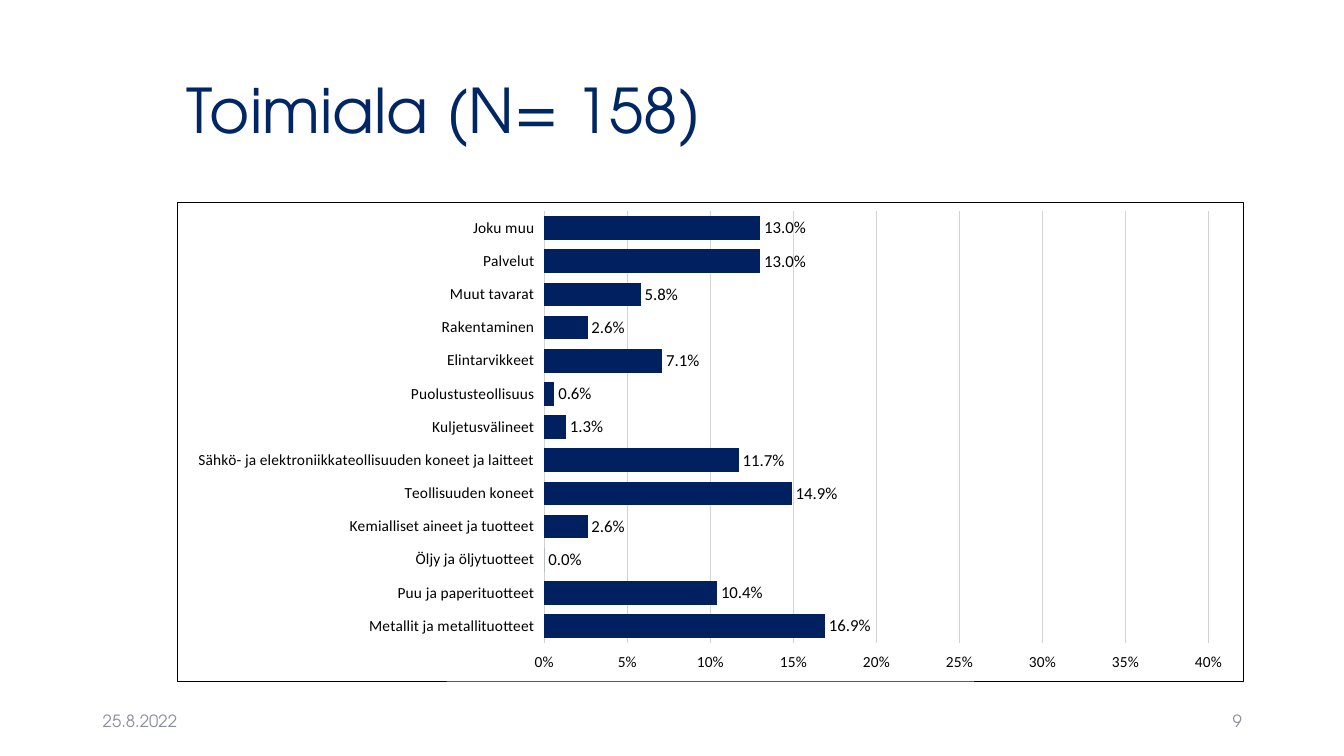
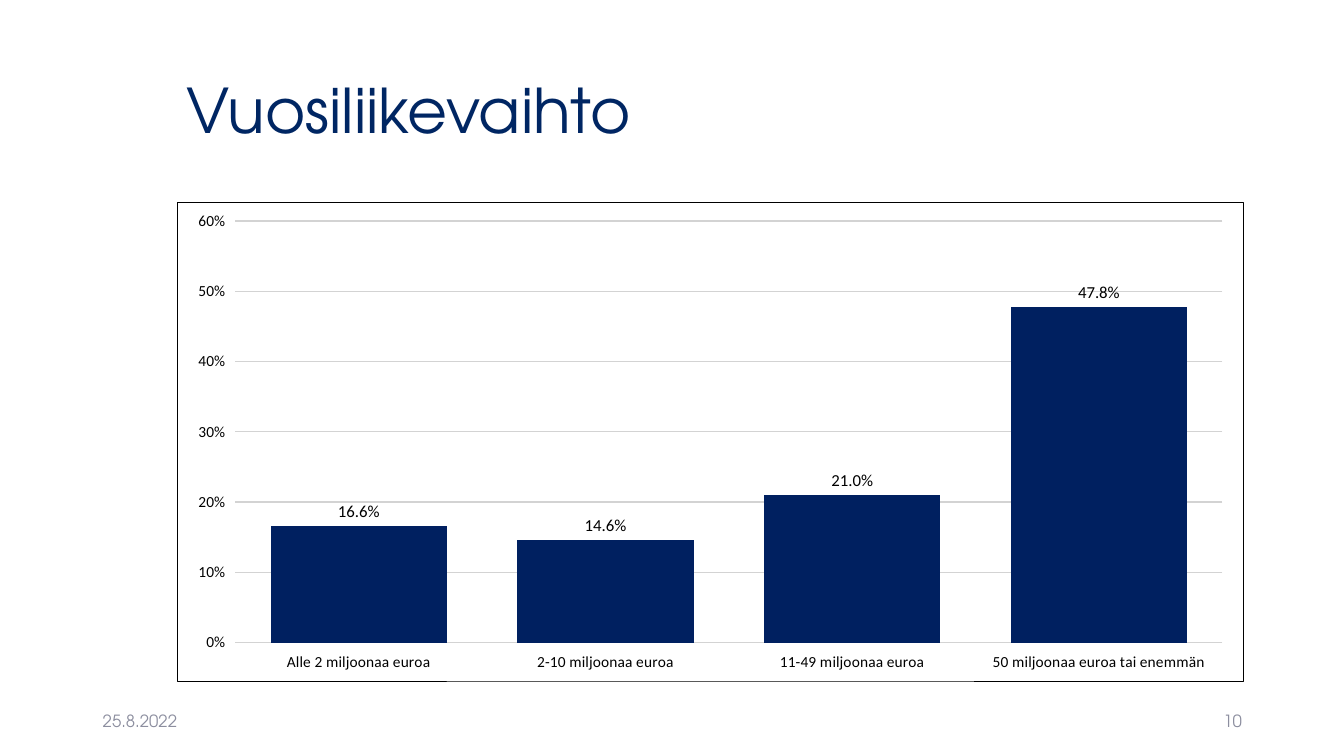
import pptx
import pptx.chart.data
import pptx.dml.color
import pptx.enum.chart
import pptx.enum.text
import pptx.oxml
import pptx.oxml.ns
import pptx.util

Cm, Pt = pptx.util.Cm, pptx.util.Pt
ChartType = pptx.enum.chart.XL_CHART_TYPE
Align = pptx.enum.text.PP_ALIGN

COLORS = {"title": "002663", "footer": "8C8E9F", "bar": "002060",
          "grid": "D3D3D3", "text": "000000", "plot": "FFFFFF"}
TITLE_FONT, CHART_FONT = "TeX Gyre Adventor", "Calibri"
LEFT, WIDTH = Cm(4.45), Cm(26.9)  # shared by title and chart
DATE = "25.8.2022"


def rgb(name):
    return pptx.dml.color.RGBColor.from_string(COLORS[name])


def sp_pr(content):
    return pptx.oxml.parse_xml(
        f'<c:spPr {pptx.oxml.ns.nsdecls("c", "a")}>{content}</c:spPr>')


def solid(name):
    return f'<a:solidFill><a:srgbClr val="{COLORS[name]}"/></a:solidFill>'


class Deck:
    def __init__(self):
        self.prs = pptx.Presentation()
        self.prs.slide_width, self.prs.slide_height = Cm(33.87), Cm(19.05)

    def add_slide(self, title, number):
        self.s = self.prs.slides.add_slide(self.prs.slide_layouts[5])
        self.title(title)
        self.footer(DATE, Cm(2.34), Align.LEFT)
        self.footer(str(number), Cm(23.93), Align.RIGHT)

    def set_text(self, sp, text, size, color, align):
        tf = sp.text_frame
        tf.word_wrap = True
        tf.vertical_anchor = pptx.enum.text.MSO_ANCHOR.MIDDLE
        p = tf.paragraphs[0]
        p.text, p.alignment = text, align
        p.font.name, p.font.size = TITLE_FONT, Pt(size)
        p.font.color.rgb = rgb(color)
        return p

    def title(self, text):
        sp = self.s.shapes.title
        sp.left, sp.top, sp.width, sp.height = LEFT, Cm(1.02), WIDTH, Cm(3.68)
        p = self.set_text(sp, text, 44, "title", Align.LEFT)
        p.line_spacing = 0.9

    def footer(self, text, left, align):
        sp = self.s.shapes.add_textbox(left, Cm(17.65), Cm(7.62), Cm(1.02))
        self.set_text(sp, text, 12, "footer", align)

    def chart(self, kind, values, maximum, step, overlap=0):
        data = pptx.chart.data.CategoryChartData()
        data.categories = list(values)
        data.add_series("Series 1", list(values.values()))
        chart = self.s.shapes.add_chart(
            kind, LEFT, Cm(5.08), WIDTH, Cm(12.09), data).chart
        chart.has_legend = chart.has_title = False
        chart.font.name, chart.font.size = CHART_FONT, Pt(11)
        chart.font.color.rgb = rgb("text")

        # Axes
        axis = chart.value_axis
        axis.minimum_scale, axis.maximum_scale = 0, maximum
        axis.major_unit = step
        axis.tick_labels.number_format = "0%"
        axis.tick_labels.number_format_is_linked = False
        axis.has_major_gridlines = True
        grid = axis.major_gridlines.format.line
        grid.color.rgb, grid.width = rgb("grid"), Pt(1)
        for ax in (axis, chart.category_axis):
            ax.format.line.fill.background()

        # Bars and their labels
        plot = chart.plots[0]
        plot.gap_width, plot.overlap = 40, overlap
        plot.vary_by_categories = False
        fill = plot.series[0].format.fill
        fill.solid()
        fill.fore_color.rgb = rgb("bar")
        plot.has_data_labels = True
        labels = plot.data_labels
        labels.show_value = True
        labels.number_format, labels.number_format_is_linked = "0.0%", False
        labels.position = pptx.enum.chart.XL_LABEL_POSITION.OUTSIDE_END
        labels.font.name, labels.font.size = CHART_FONT, Pt(12)
        labels.font.color.rgb = rgb("text")

        # Plot fill and frame around the chart
        root = chart.element
        root.find(".//" + pptx.oxml.ns.qn("c:plotArea")).append(
            sp_pr(solid("plot")))
        root.find(pptx.oxml.ns.qn("c:txPr")).addprevious(sp_pr(
            f'<a:noFill/><a:ln w="{Pt(0.5)}">{solid("text")}</a:ln>'))


def main():
    deck = Deck()

    # Industries
    deck.add_slide("Toimiala (N= 158)", 9)
    deck.chart(ChartType.BAR_CLUSTERED, {
        "Metallit ja metallituotteet": 0.169,
        "Puu ja paperituotteet": 0.104,
        "Öljy ja öljytuotteet": 0,
        "Kemialliset aineet ja tuotteet": 0.026,
        "Teollisuuden koneet": 0.149,
        "Sähkö- ja elektroniikkateollisuuden koneet ja laitteet": 0.117,
        "Kuljetusvälineet": 0.013,
        "Puolustusteollisuus": 0.006,
        "Elintarvikkeet": 0.071,
        "Rakentaminen": 0.026,
        "Muut tavarat": 0.058,
        "Palvelut": 0.13,
        "Joku muu": 0.13,
    }, 0.4, 0.05)

    # Annual turnover
    deck.add_slide("Vuosiliikevaihto", 10)
    deck.chart(ChartType.COLUMN_CLUSTERED, {
        "Alle 2 miljoonaa euroa": 0.166,
        "2-10 miljoonaa euroa": 0.146,
        "11-49 miljoonaa euroa": 0.21,
        "50 miljoonaa euroa tai enemmän": 0.478,
    }, 0.6, 0.1, overlap=-2)

    deck.prs.save("out.pptx")


if __name__ == "__main__":
    main()
